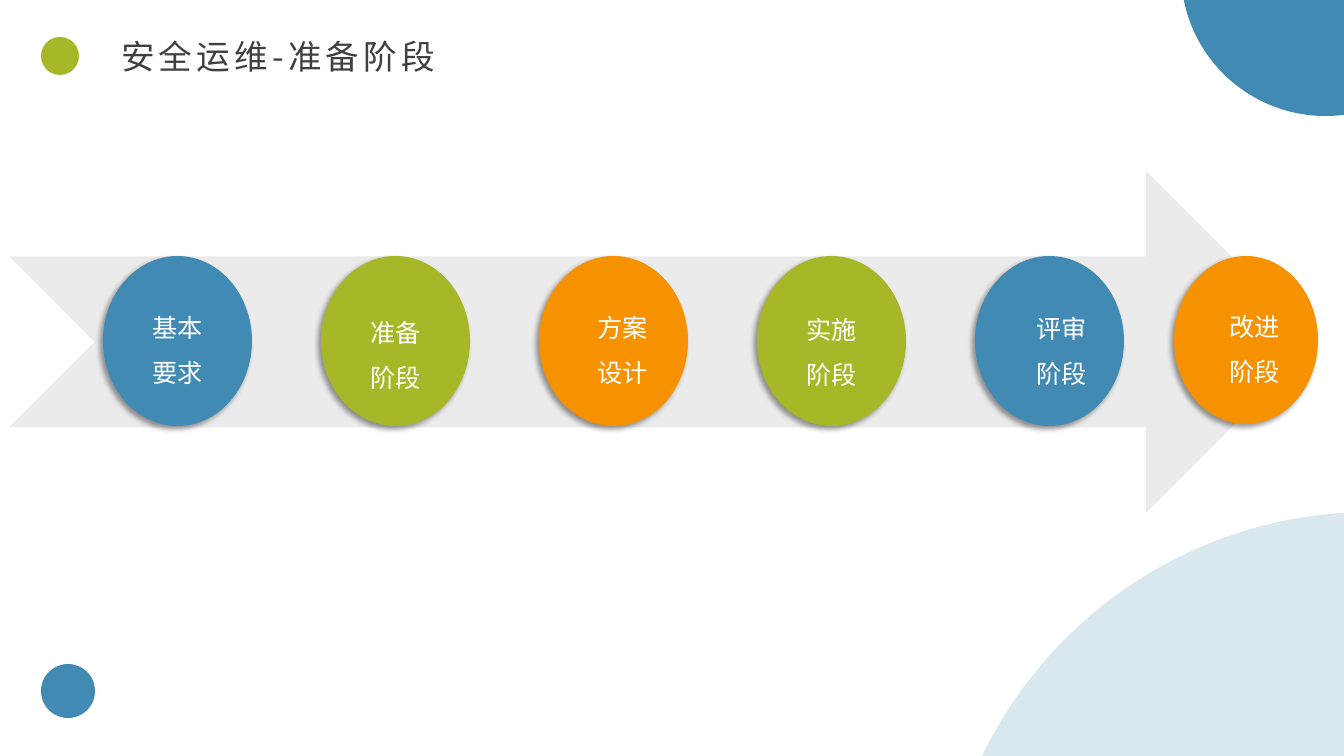
import lxml.etree
import pptx
import pptx.dml.color
import pptx.enum.shapes
import pptx.enum.text
import pptx.oxml.ns
import pptx.util

SLIDE_WIDTH, SLIDE_HEIGHT = 1344, 756
EMU_PER_PX = 12192000 / SLIDE_WIDTH
FONT = "Noto Sans CJK SC"
COLORS = {
    "blue": "418AB3",
    "green": "A6B727",
    "orange": "F69200",
    "gray": "D9D9D9",
    "title": "404040",
    "white": "FFFFFF",
    "shadow": "000000",
}
SHAPES = pptx.enum.shapes.MSO_SHAPE
ALIGN = pptx.enum.text.PP_ALIGN

# lines, colour, circle width and height, label offset in its circle, label width
STAGES = [
    (("基本", "要求"), "blue", (149, 170), (31, 36), 87),
    (("准备", "阶段"), "green", (149, 170), (39, 41), 72),
    (("方案", "设计"), "orange", (149, 170), (42, 36), 83),
    (("实施", "阶段"), "green", (149, 170), (31, 38), 88),
    (("评审", "阶段"), "blue", (149, 170), (46, 37), 82),
    (("改进", "阶段"), "orange", (144, 168), (34, 35), 93),
]
STAGE_PITCH = 218
LAST_STAGE_SHIFT = -19
LABEL_HEIGHT = 102


def px(length):
    return pptx.util.Emu(round(length * EMU_PER_PX))


def px_box(box):
    return [px(length) for length in box]


def add_xml(parent, tag, **attributes):
    return lxml.etree.SubElement(parent, pptx.oxml.ns.qn(tag), attributes)


def add_filled_shape(slide, kind, box, color, alpha=None):
    shape = slide.shapes.add_shape(kind, *px_box(box))
    shape.shadow.inherit = False
    shape.fill.solid()
    shape.fill.fore_color.rgb = pptx.dml.color.RGBColor.from_string(COLORS[color])
    shape.line.fill.background()
    if alpha is not None:
        fill_color = shape.fill._xPr.find(".//" + pptx.oxml.ns.qn("a:srgbClr"))
        add_xml(fill_color, "a:alpha", val=str(alpha * 1000))
    return shape


def add_soft_shadow(shape):
    """Cast a blurred shadow towards the lower left."""
    effects = shape._element.spPr.find(pptx.oxml.ns.qn("a:effectLst"))
    shadow = add_xml(
        effects, "a:outerShdw",
        blurRad=str(pptx.util.Pt(4)), dist=str(pptx.util.Pt(3)),
        dir=str(135 * 60000), algn="tr", rotWithShape="0",
    )
    shadow_color = add_xml(shadow, "a:srgbClr", val=COLORS["shadow"])
    add_xml(shadow_color, "a:alpha", val="40000")


def write_text(shape, lines, size, color, align, line_spacing=1.0, tracking=0):
    """Fill a shape with one paragraph per line; tracking is in points."""
    frame = shape.text_frame
    frame.word_wrap = True
    frame.auto_size = pptx.enum.text.MSO_AUTO_SIZE.SHAPE_TO_FIT_TEXT
    frame.vertical_anchor = pptx.enum.text.MSO_ANCHOR.TOP
    frame.text = "\n".join(lines)
    for paragraph in frame.paragraphs:
        paragraph.alignment = align
        paragraph.line_spacing = line_spacing
        font = paragraph.runs[0].font
        font.size = pptx.util.Pt(size)
        font.name = FONT
        font.color.rgb = pptx.dml.color.RGBColor.from_string(COLORS[color])
        add_xml(font._element, "a:ea", typeface=FONT)
        if tracking:
            font._element.set("spc", str(tracking * 100))


def add_background_circles(slide, box):
    left, top, width, height = box
    right, bottom = left + width, top + height
    circles = [
        (right - 405, bottom - 244, 864, "blue", 20),
        (right - 163, top - 173, 289, "blue", None),
        (left + 41, bottom - 92, 54, "blue", None),
    ]
    for x, y, diameter, color, alpha in circles:
        circle_box = (x, y, diameter, diameter)
        add_filled_shape(slide, SHAPES.FLOWCHART_CONNECTOR, circle_box, color, alpha)


def add_heading(slide, box):
    left, top, width, height = box
    bullet_box = (left, top + 6, 38, 38)
    add_filled_shape(slide, SHAPES.FLOWCHART_CONNECTOR, bullet_box, "green")
    title = slide.shapes.title
    title.left, title.top, title.width, title.height = px_box(
        (left + 70, top, width - 70, height))
    write_text(title, ["安全运维-准备阶段"], size=24, color="title",
               align=ALIGN.JUSTIFY, tracking=3)


def add_stage_arrow(slide, box):
    left, top, width, height = box
    add_filled_shape(slide, SHAPES.NOTCHED_RIGHT_ARROW, box, "gray", alpha=50)
    circle_top = top + height // 4
    circle_lefts = [left + 94 + STAGE_PITCH * index for index in range(len(STAGES))]
    circle_lefts[-1] += LAST_STAGE_SHIFT
    for circle_left, (_, color, size, _, _) in zip(circle_lefts, STAGES):
        circle = add_filled_shape(
            slide, SHAPES.OVAL, (circle_left, circle_top, *size), color)
        add_soft_shadow(circle)
    for circle_left, (lines, _, _, offset, label_width) in zip(circle_lefts, STAGES):
        label = slide.shapes.add_textbox(*px_box(
            (circle_left + offset[0], circle_top + offset[1], label_width, LABEL_HEIGHT)))
        write_text(label, lines, size=18, color="white",
                   align=ALIGN.CENTER, line_spacing=1.5)


def main():
    presentation = pptx.Presentation()
    presentation.slide_width = px(SLIDE_WIDTH)
    presentation.slide_height = px(SLIDE_HEIGHT)
    slide = presentation.slides.add_slide(presentation.slide_layouts[5])
    add_background_circles(slide, (0, 0, SLIDE_WIDTH, SLIDE_HEIGHT))
    add_heading(slide, (41, 31, 448, 50))
    add_stage_arrow(slide, (9, 171, 1308, 342))
    presentation.save("out.pptx")


if __name__ == "__main__":
    main()
